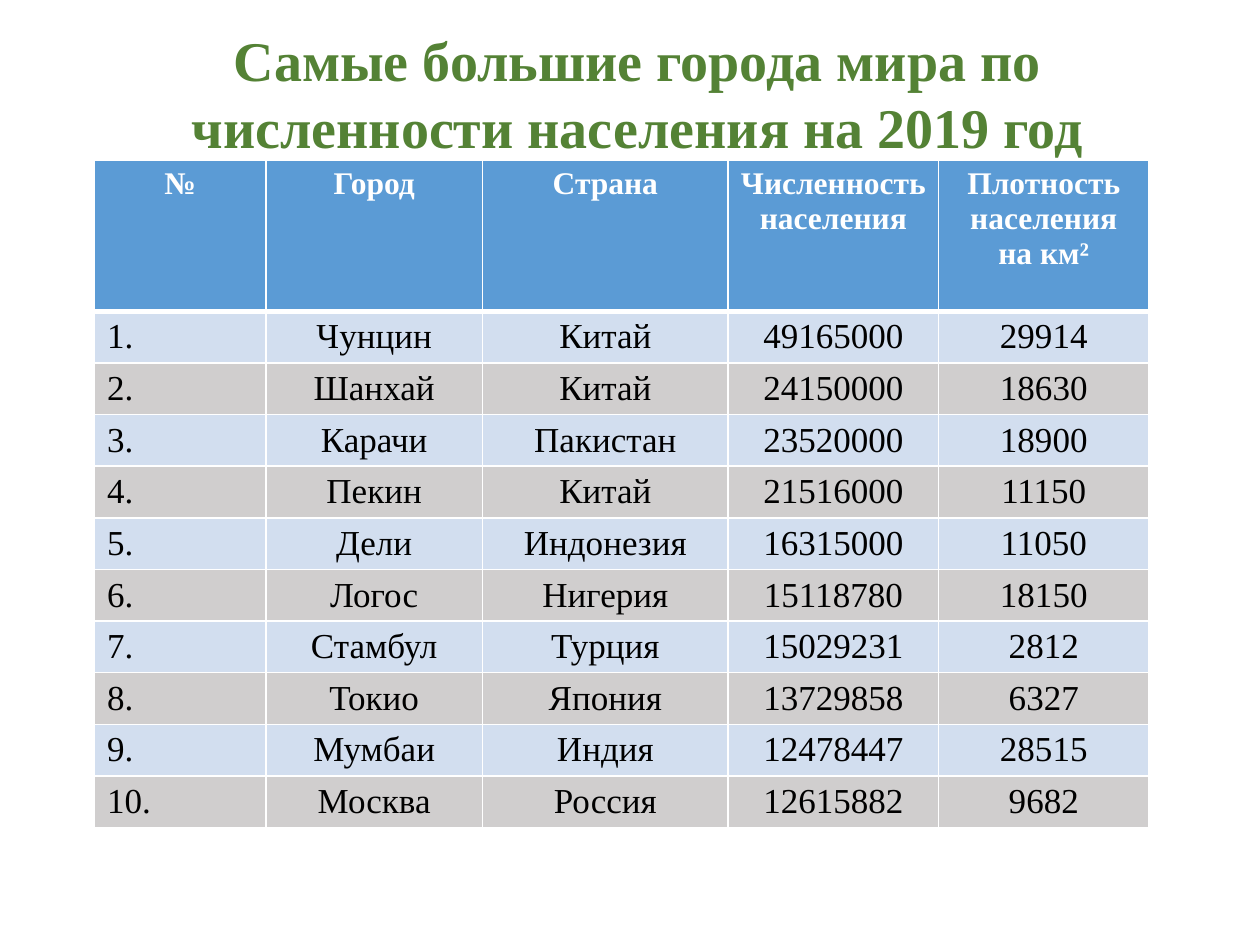
from pptx import Presentation
from pptx.dml.color import RGBColor
from pptx.enum import text
from pptx.oxml import parse_xml
from pptx.oxml.ns import nsdecls
from pptx.util import Inches, Pt

FONT = "Times New Roman"
WHITE, BLACK, GREEN = "FFFFFF", "000000", "548235"
HEADER_FILL, BAND_FILLS = "5B9BD5", ("D2DEEF", "D0CECE")

TITLE = "Самые большие города мира по численности населения на 2019 год"
HEADERS = ["№", "Город", "Страна", "Численность населения",
           "Плотность населения на км²"]
CITIES = [
    ("Чунцин", "Китай", 49165000, 29914),
    ("Шанхай", "Китай", 24150000, 18630),
    ("Карачи", "Пакистан", 23520000, 18900),
    ("Пекин", "Китай", 21516000, 11150),
    ("Дели", "Индонезия", 16315000, 11050),
    ("Логос", "Нигерия", 15118780, 18150),
    ("Стамбул", "Турция", 15029231, 2812),
    ("Токио", "Япония", 13729858, 6327),
    ("Мумбаи", "Индия", 12478447, 28515),
    ("Москва", "Россия", 12615882, 9682),
]
COLUMN_WIDTHS = [1.36, 1.72, 1.95, 1.67, 1.67]
HEADER_HEIGHT, ROW_HEIGHT = 1.2, 0.41


def color(value):
    return RGBColor.from_string(value)


def style_paragraph(para, size, font_color, bold, align):
    para.alignment = align
    for span in para.runs:
        span.font.name = FONT
        span.font.size = Pt(size)
        span.font.bold = bold
        span.font.color.rgb = color(font_color)


def add_title(page, left, top, width, height):
    title = page.shapes.title
    title.left, title.top = Inches(left), Inches(top)
    title.width, title.height = Inches(width), Inches(height)
    frame = title.text_frame
    frame.text = TITLE
    frame.word_wrap = True
    frame.auto_size = text.MSO_AUTO_SIZE.NONE
    frame.vertical_anchor = text.MSO_ANCHOR.MIDDLE
    para = frame.paragraphs[0]
    para.line_spacing = 1.0
    style_paragraph(para, 32, GREEN, True, text.PP_ALIGN.CENTER)


def set_borders(cell, top, bottom):
    """Draw white cell borders; top and bottom are widths in points."""
    properties = cell._tc.get_or_add_tcPr()
    sides = [("lnL", 1), ("lnR", 1), ("lnT", top), ("lnB", bottom)]
    for position, (side, width) in enumerate(sides):
        properties.insert(position, parse_xml(
            f'<a:{side} {nsdecls("a")} w="{Pt(width)}"><a:solidFill>'
            f'<a:srgbClr val="{WHITE}"/></a:solidFill></a:{side}>'))


def fill_cell(cell, value, row, column):
    header = row == 0
    cell.text = str(value)
    cell.fill.solid()
    cell.fill.fore_color.rgb = color(
        HEADER_FILL if header else BAND_FILLS[(row - 1) % 2])
    numbered = column == 0 and not header
    style_paragraph(cell.text_frame.paragraphs[0], 18 if header else 20,
                    WHITE if header else BLACK, header,
                    text.PP_ALIGN.LEFT if numbered else text.PP_ALIGN.CENTER)
    set_borders(cell, top=3 if row == 1 else 1, bottom=3 if header else 1)


def add_city_table(page, left, top):
    rows = [HEADERS] + [(f"{number}.", *city)
                        for number, city in enumerate(CITIES, 1)]
    heights = [HEADER_HEIGHT] + [ROW_HEIGHT] * len(CITIES)
    table = page.shapes.add_table(
        len(rows), len(HEADERS), Inches(left), Inches(top),
        Inches(sum(COLUMN_WIDTHS)), Inches(sum(heights))).table
    for column, width in zip(table.columns, COLUMN_WIDTHS):
        column.width = Inches(width)
    for row, height in zip(table.rows, heights):
        row.height = Inches(height)
    for row, values in enumerate(rows):
        for column, value in enumerate(values):
            fill_cell(table.cell(row, column), value, row, column)


def main():
    deck = Presentation()
    deck.slide_width, deck.slide_height = Inches(10), Inches(7.5)
    page = deck.slides.add_slide(deck.slide_layouts.get_by_name("Title Only"))
    add_title(page, 0.79, 0.27, 8.54, 0.93)
    add_city_table(page, 0.75, 1.27)
    deck.save("out.pptx")


if __name__ == "__main__":
    main()
